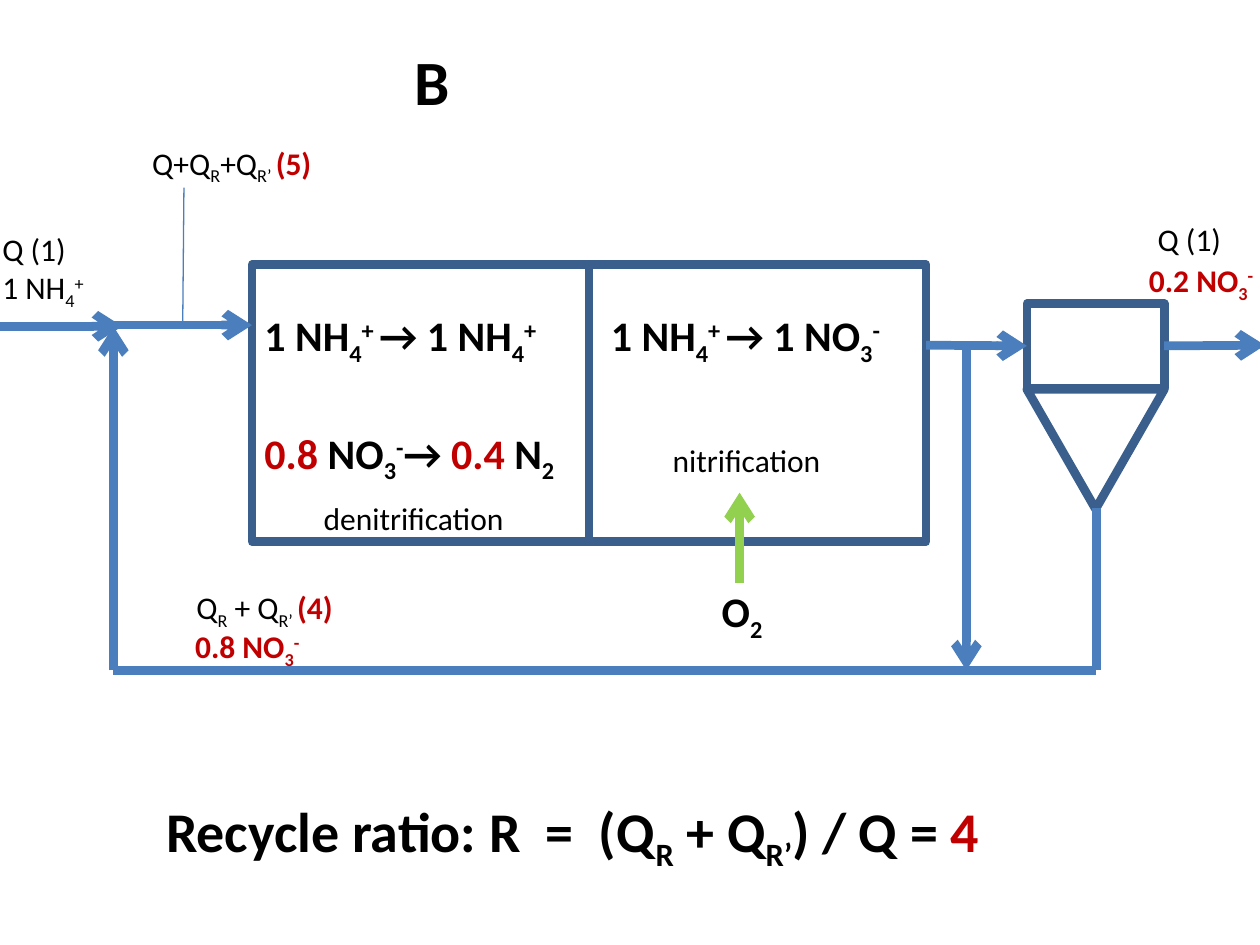
from typing import NamedTuple, Optional

from lxml.etree import SubElement
from pptx import Presentation
from pptx.dml.color import RGBColor
from pptx.enum.shapes import MSO_CONNECTOR as CONN, MSO_SHAPE as SHAPE
from pptx.oxml.ns import qn
from pptx.util import Pt

PX = 9144
BLACK = RGBColor(0x00, 0x00, 0x00)
RED = RGBColor(0xC0, 0x00, 0x00)
PIPE = RGBColor(0x4B, 0x7E, 0xBC)
WALL = RGBColor(0x3A, 0x5F, 0x8C)
GREEN = RGBColor(0x92, 0xD0, 0x50)
FONT = "Calibri"
BASELINES = {"_": "-25000", "^": "30000"}
RED_MARK = "*"


class Box(NamedTuple):
    kind: SHAPE
    x: int
    y: int
    w: int
    h: int
    rotation: int = 0


class Line(NamedTuple):
    x1: int
    y1: int
    x2: int
    y2: int
    arrow: bool = True
    color: RGBColor = PIPE
    width: float = 5
    begin: Optional[tuple] = None
    end: Optional[tuple] = None


class Label(NamedTuple):
    x: int
    y: int
    w: int
    h: int
    text: str
    size: int = 18
    bold: bool = False


def draw_box(shapes, box: Box):
    sp = shapes.add_shape(box.kind, box.x * PX, box.y * PX, box.w * PX, box.h * PX)
    sp.rotation = box.rotation
    sp.shadow.inherit = False
    sp.fill.background()
    sp.line.color.rgb = WALL
    sp.line.width = Pt(5)
    return sp


def draw_line(shapes, line: Line) -> None:
    c = shapes.add_connector(CONN.STRAIGHT, line.x1 * PX, line.y1 * PX,
                             line.x2 * PX, line.y2 * PX)
    if line.begin:
        c.begin_connect(*line.begin)
    if line.end:
        c.end_connect(*line.end)
    c.line.color.rgb = line.color
    c.line.width = Pt(line.width)
    if line.arrow:
        SubElement(c.line._get_or_add_ln(), qn("a:tailEnd"), type="arrow")
    SubElement(c._element.spPr, qn("a:effectLst"))


def add_run(p, text: str, label: Label, red: bool, mark: str) -> None:
    if not text:
        return
    r = p.add_run()
    r.text = text
    r.font.name = FONT
    r.font.size = Pt(label.size)
    r.font.bold = label.bold or red
    r.font.color.rgb = RED if red else BLACK
    if mark:
        r.font._element.set("baseline", BASELINES[mark])


def add_marked_text(p, text: str, label: Label) -> None:
    red, mark, pending = False, "", ""
    for ch in text:
        if ch != RED_MARK and ch not in BASELINES:
            pending += ch
            continue
        add_run(p, pending, label, red, mark)
        pending = ""
        if ch == RED_MARK:
            red = not red
        else:
            mark = "" if mark == ch else ch
    add_run(p, pending, label, red, mark)


def draw_label(shapes, label: Label) -> None:
    tb = shapes.add_textbox(label.x * PX, label.y * PX, label.w * PX, label.h * PX)
    tf = tb.text_frame
    tf.word_wrap = True
    for i, text in enumerate(label.text.split("\n")):
        p = tf.add_paragraph() if i else tf.paragraphs[0]
        add_marked_text(p, text, label)


LABELS = [
    Label(319, 29, 252, 71, "B", 36, True),
    Label(200, 241, 291, 104, "1 NH_4_^+ ^→ 1 NH_4_^+^", 24, True),
    Label(200, 334, 291, 50, "*0.8* NO_3_^-^→ *0.4* N_2_", 24, True),
    Label(475, 241, 291, 104, "1 NH_4_^+ ^→ 1 NO_3_^-^", 24, True),
    Label(-8, 178, 106, 71, "Q (1)\n1 NH_4_^+^"),
    Label(146, 462, 172, 40, "Q_R_ + Q_R’ _*(4)*"),
    Label(111, 109, 255, 40, "Q+Q_R_+Q_R’ _*(5)*"),
    Label(122, 627, 709, 64, "Recycle ratio: R  =  (Q_R_ + Q_R’_) / Q = *4*", 32, True),
    Label(909, 170, 106, 40, "Q (1)"),
    Label(145, 493, 172, 40, "*0.8 NO_3_^-^*"),
    Label(902, 202, 106, 40, "*0.2 NO_3_^-^*"),
    Label(563, 460, 94, 104, "O_2_", 24, True),
    Label(524, 345, 142, 40, "nitrification"),
    Label(247, 391, 205, 40, "denitrification"),
]


def main() -> None:
    prs = Presentation()
    prs.slide_width, prs.slide_height = 1000 * PX, 750 * PX
    s = prs.slides.add_slide(prs.slide_layouts[6])
    shapes = s.shapes

    tank = draw_box(shapes, Box(SHAPE.RECTANGLE, 200, 210, 535, 220))
    clarifier = draw_box(shapes, Box(SHAPE.RECTANGLE, 815, 241, 109, 67))
    draw_box(shapes, Box(SHAPE.ISOSCELES_TRIANGLE, 815, 309, 109, 95, 180))

    lines = [
        Line(-5, 259, 97, 259),
        Line(90, 532, 90, 259),
        Line(90, 258, 200, 258),
        Line(468, 210, 468, 430, False, WALL, begin=(tank, 0), end=(tank, 2)),
        Line(735, 274, 815, 274, end=(clarifier, 1)),
        Line(924, 274, 1004, 274, begin=(clarifier, 3)),
        Line(767, 274, 767, 532),
        Line(870, 403, 870, 532, False),
        Line(90, 532, 870, 532, False),
        Line(146, 149, 145, 259, False, width=0.75),
        Line(587, 463, 587, 391, color=GREEN),
    ]
    for line in lines:
        draw_line(shapes, line)
    for label in LABELS:
        draw_label(shapes, label)

    prs.save("out.pptx")


if __name__ == "__main__":
    main()
